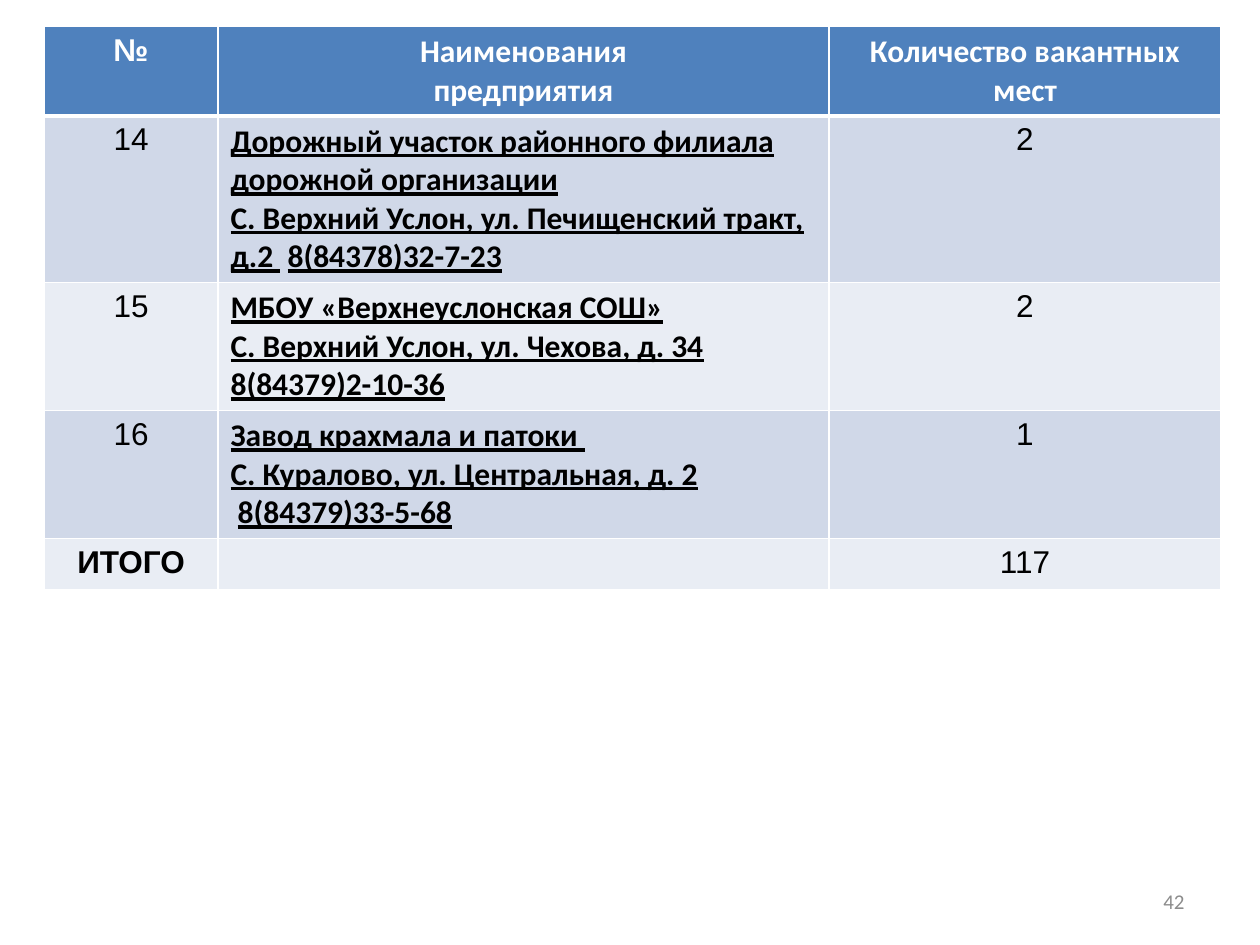
from dataclasses import dataclass

from lxml.etree import SubElement
from pptx import Presentation
from pptx.dml.color import RGBColor
from pptx.enum.text import MSO_ANCHOR, PP_ALIGN
from pptx.oxml.ns import qn
from pptx.util import Inches, Pt


@dataclass(frozen=True)
class Theme:
    header: str = "4F81BD"
    bands: tuple = ("D0D8E8", "E9EDF4")
    border: str = "FFFFFF"
    header_text: str = "FFFFFF"
    text: str = "000000"
    muted: str = "8C8C8C"
    number_font: str = "Arial"
    text_font: str = "Calibri"
    body_size: int = 18
    page_size: int = 12


HEADER = ["№", "Наименования\nпредприятия", "Количество вакантных мест"]
# Each company is a list of lines, each line a list of (text, underlined) runs.
COMPANIES = [
    ("14", [
        [("Дорожный участок районного филиала дорожной организации", True)],
        [("С. Верхний Услон, ул. Печищенский тракт, д.2 ", True), (" ", False),
         ("8(84378)32-7-23", True)],
    ], "2"),
    ("15", [
        [("МБОУ «Верхнеуслонская СОШ»", True)],
        [("С. Верхний Услон, ул. Чехова, д. 34", True)],
        [("8(84379)2-10-36", True)],
    ], "2"),
    ("16", [
        [("Завод крахмала и патоки ", True)],
        [("С. Куралово, ул. Центральная, д. 2", True)],
        [(" ", False), ("8(84379)33-5-68", True)],
    ], "1"),
]
TOTAL = ("ИТОГО", "117")
COL_WIDTHS = [1.38, 4.85, 3.11]
ROW_HEIGHTS = [0.69, 1.3, 1.0, 1.0, 0.41]


class SlideBuilder:
    def __init__(self, prs, theme):
        self.theme = theme
        self.s = prs.slides.add_slide(prs.slide_layouts[6])

    def style(self, p, font, color, size, bold=False, align=PP_ALIGN.CENTER):
        p.alignment = align
        for r in p.runs:
            r.font.name = font
            r.font.size = Pt(size)
            r.font.bold = bold
            r.font.color.rgb = RGBColor.from_string(color)

    def border(self, cell, widths):
        """Draw cell borders; widths are points for left, right, top, bottom."""
        tc_pr = cell._tc.get_or_add_tcPr()
        for side, width in zip("LRTB", widths):
            ln = SubElement(tc_pr, qn(f"a:ln{side}"), w=str(Pt(width)))
            fill = SubElement(ln, qn("a:solidFill"))
            SubElement(fill, qn("a:srgbClr"), val=self.theme.border)

    def table(self, left, top):
        rows, cols = len(ROW_HEIGHTS), len(COL_WIDTHS)
        frame = self.s.shapes.add_table(
            rows, cols, Inches(left), Inches(top),
            Inches(sum(COL_WIDTHS)), Inches(sum(ROW_HEIGHTS)))
        table = frame.table
        for col, width in zip(table.columns, COL_WIDTHS):
            col.width = Inches(width)
        for i, (row, height) in enumerate(zip(table.rows, ROW_HEIGHTS)):
            row.height = Inches(height)
            color = self.theme.bands[(i - 1) % 2] if i else self.theme.header
            for cell in row.cells:
                self.border(cell, (1, 1, 3 if i == 1 else 1, 1 if i else 3))
                cell.fill.solid()
                cell.fill.fore_color.rgb = RGBColor.from_string(color)
        return table

    def cell_text(self, cell, text, font, color, bold=False):
        cell.text_frame.text = text
        for p in cell.text_frame.paragraphs:
            self.style(p, font, color, self.theme.body_size, bold)

    def cell_company(self, cell, lines):
        t, tf = self.theme, cell.text_frame
        for i, line in enumerate(lines):
            p = tf.add_paragraph() if i else tf.paragraphs[0]
            for text, underlined in line:
                r = p.add_run()
                r.text = text
                r.font.underline = underlined
            self.style(p, t.text_font, t.text, t.body_size, True, PP_ALIGN.LEFT)

    def page_number(self, text, left, top, width, height):
        t = self.theme
        sp = self.s.shapes.add_textbox(
            Inches(left), Inches(top), Inches(width), Inches(height))
        tf = sp.text_frame
        tf.word_wrap = True
        tf.vertical_anchor = MSO_ANCHOR.MIDDLE
        tf.text = text
        self.style(tf.paragraphs[0], t.text_font, t.muted, t.page_size,
                   align=PP_ALIGN.RIGHT)


def main():
    prs = Presentation()
    prs.slide_width, prs.slide_height = Inches(10), Inches(7.5)
    t = Theme()
    slide = SlideBuilder(prs, t)
    table = slide.table(0.35, 0.21)

    for col, text in enumerate(HEADER):
        font = t.text_font if col else t.number_font
        slide.cell_text(table.cell(0, col), text, font, t.header_text, True)
    for row, (number, lines, places) in enumerate(COMPANIES, 1):
        slide.cell_text(table.cell(row, 0), number, t.number_font, t.text)
        slide.cell_company(table.cell(row, 1), lines)
        slide.cell_text(table.cell(row, 2), places, t.number_font, t.text)
    last = len(ROW_HEIGHTS) - 1
    label, places = TOTAL
    slide.cell_text(table.cell(last, 0), label, t.number_font, t.text, True)
    slide.cell_text(table.cell(last, 2), places, t.number_font, t.text)

    slide.page_number("42", 7.17, 6.95, 2.33, 0.4)
    prs.save("out.pptx")


if __name__ == "__main__":
    main()
